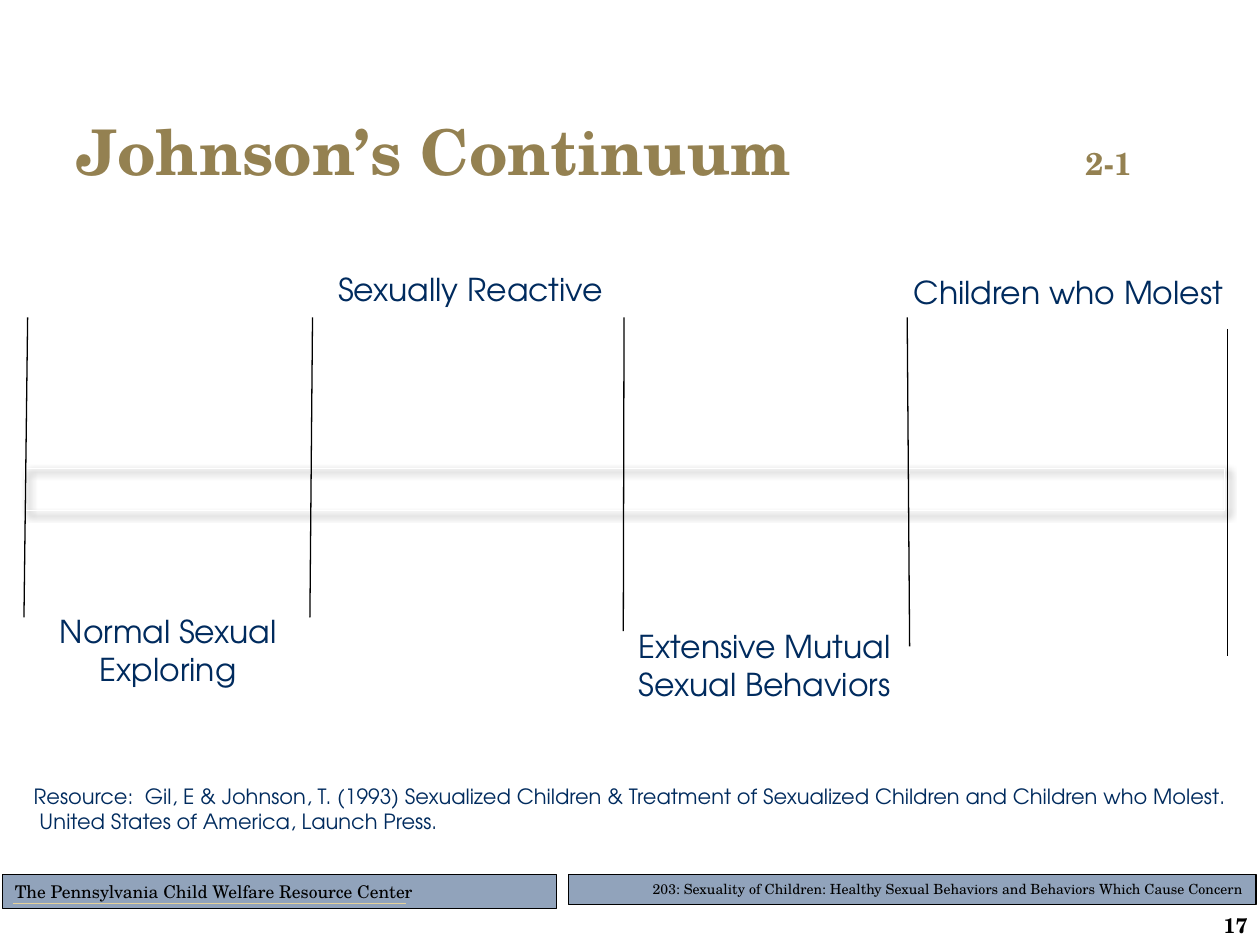
import lxml.etree
import pptx
import pptx.dml.color
import pptx.enum.shapes
import pptx.enum.text
import pptx.oxml
import pptx.oxml.ns
import pptx.util

Pt = pptx.util.Pt
ALIGN = pptx.enum.text.PP_ALIGN
ANCHOR = pptx.enum.text.MSO_ANCHOR
SERIF, SANS = "TeX Gyre Schola", "TeX Gyre Adventor"
BLACK, NAVY, GOLD, BAR = "000000", "002B5E", "948151", "91A3BB"
NAMESPACE = pptx.oxml.ns.nsdecls("a")


def color(value):
    return pptx.dml.color.RGBColor.from_string(value)


def write(shape, text, font, size, value, align=ALIGN.LEFT, anchor=ANCHOR.TOP, bold=False):
    frame = shape.text_frame
    frame.word_wrap = True
    frame.vertical_anchor = anchor
    paragraph = frame.paragraphs[0]
    paragraph.text = text
    paragraph.alignment = align
    paragraph.font.name = font
    paragraph.font.size = Pt(size)
    paragraph.font.bold = bold
    paragraph.font.color.rgb = color(value)
    return paragraph


presentation = pptx.Presentation()
presentation.slide_width, presentation.slide_height = Pt(720), Pt(540)
slide = presentation.slides.add_slide(presentation.slide_layouts[6])
shapes = slide.shapes

# Footer bars
footer_bars = [
    (324.7, 393.1, 17.3, 0.75, 8, ALIGN.RIGHT,
     "203: Sexuality of Children: Healthy Sexual Behaviors and Behaviors Which Cause Concern"),
    (1.4, 316.8, 19.4, 0.5, 10, ALIGN.LEFT, "The Pennsylvania Child Welfare Resource Center"),
]
for left, width, height, line_width, size, align, text in footer_bars:
    bar = shapes.add_shape(pptx.enum.shapes.MSO_SHAPE.RECTANGLE,
                           Pt(left), Pt(499.7), Pt(width), Pt(height))
    bar.shadow.inherit = False
    bar.fill.solid()
    bar.fill.fore_color.rgb = color(BAR)
    bar.line.color.rgb = color(BLACK)
    bar.line.width = Pt(line_width)
    write(bar, text, SERIF, size, BLACK, align)

# Title, with the handout number at a tab stop
title = shapes.add_textbox(Pt(36.7), Pt(62.6), Pt(648), Pt(46.8))
title_paragraph = title.text_frame.paragraphs[0]
tab_list = lxml.etree.SubElement(title_paragraph._p.get_or_add_pPr(), pptx.oxml.ns.qn("a:tabLst"))
lxml.etree.SubElement(tab_list, pptx.oxml.ns.qn("a:tab"), pos=str(Pt(576.5)), algn="l")
write(title, "Johnson’s Continuum\t", SERIF, 36, GOLD, anchor=ANCHOR.MIDDLE, bold=True)
number_run = title_paragraph.add_run()
number_run.text = "2-1"
number_run.font.size = Pt(18)

# Slide number
slide_number = shapes.add_textbox(Pt(640.1), Pt(521.3), Pt(79.9), Pt(15.1))
write(slide_number, "17", SERIF, 12, BLACK, ALIGN.RIGHT, ANCHOR.MIDDLE, True)

# Continuum band: a one-cell table with white borders and a soft shadow
table = shapes.add_table(1, 1, Pt(14.4), Pt(267.8), Pt(685.4), Pt(24)).table
table.first_row = table.horz_banding = False
table._tbl.tblPr.insert(0, pptx.oxml.parse_xml(
    f'<a:effectLst {NAMESPACE}><a:outerShdw blurRad="50800" dist="38100" dir="2700000" algn="tl">'
    '<a:srgbClr val="000000"><a:alpha val="40000"/></a:srgbClr></a:outerShdw></a:effectLst>'))
cell = table.cell(0, 0)
cell.text_frame.paragraphs[0].font.size = Pt(10)
cell_properties = cell._tc.get_or_add_tcPr()
for side in ("lnL", "lnR", "lnT", "lnB"):
    cell_properties.append(pptx.oxml.parse_xml(
        f'<a:{side} {NAMESPACE} w="12700"><a:solidFill><a:srgbClr val="FFFFFF"/></a:solidFill></a:{side}>'))
cell.fill.background()

# Footer underline and the dividers of the continuum
lines = [
    (7.2, 516.2, 231.8, 516.2, "E5D199"),
    (178.6, 181.4, 177.1, 352.8, BLACK),
    (15.8, 181.4, 13.7, 352.8, BLACK),
    (356.6, 181.4, 356.2, 360.7, BLACK),
    (518.4, 181.4, 519.8, 369.4, BLACK),
    (701.3, 187.9, 701.3, 375.1, BLACK),
]
for x1, y1, x2, y2, value in lines:
    line = shapes.add_connector(pptx.enum.shapes.MSO_CONNECTOR.STRAIGHT,
                                Pt(x1), Pt(y1), Pt(x2), Pt(y2))
    line.line.color.rgb = color(value)
    line.line.width = Pt(0.75)
    lxml.etree.SubElement(line._element.spPr, pptx.oxml.ns.qn("a:effectLst"))

# Stage labels
labels = [
    ("Sexually Reactive", 179.3, 150.5, 179.3, 28.8),
    ("Children who Molest", 509.8, 152.6, 201.6, 28.8),
    ("Normal Sexual Exploring", 7.2, 346.3, 177.8, 51.1),
    ("Extensive Mutual Sexual Behaviors", 355.7, 355, 162.7, 51.1),
]
for text, left, top, width, height in labels:
    label = shapes.add_textbox(Pt(left), Pt(top), Pt(width), Pt(height))
    write(label, text, SANS, 18, NAVY, ALIGN.CENTER)

# Citation
citation = shapes.add_textbox(Pt(12.2), Pt(444.2), Pt(696.2), Pt(36))
write(citation, "Resource:  Gil, E & Johnson, T. (1993) Sexualized Children & Treatment of Sexualized "
      "Children and Children who Molest.  United States of America, Launch Press.", SANS, 12, NAVY)

presentation.save("out.pptx")
